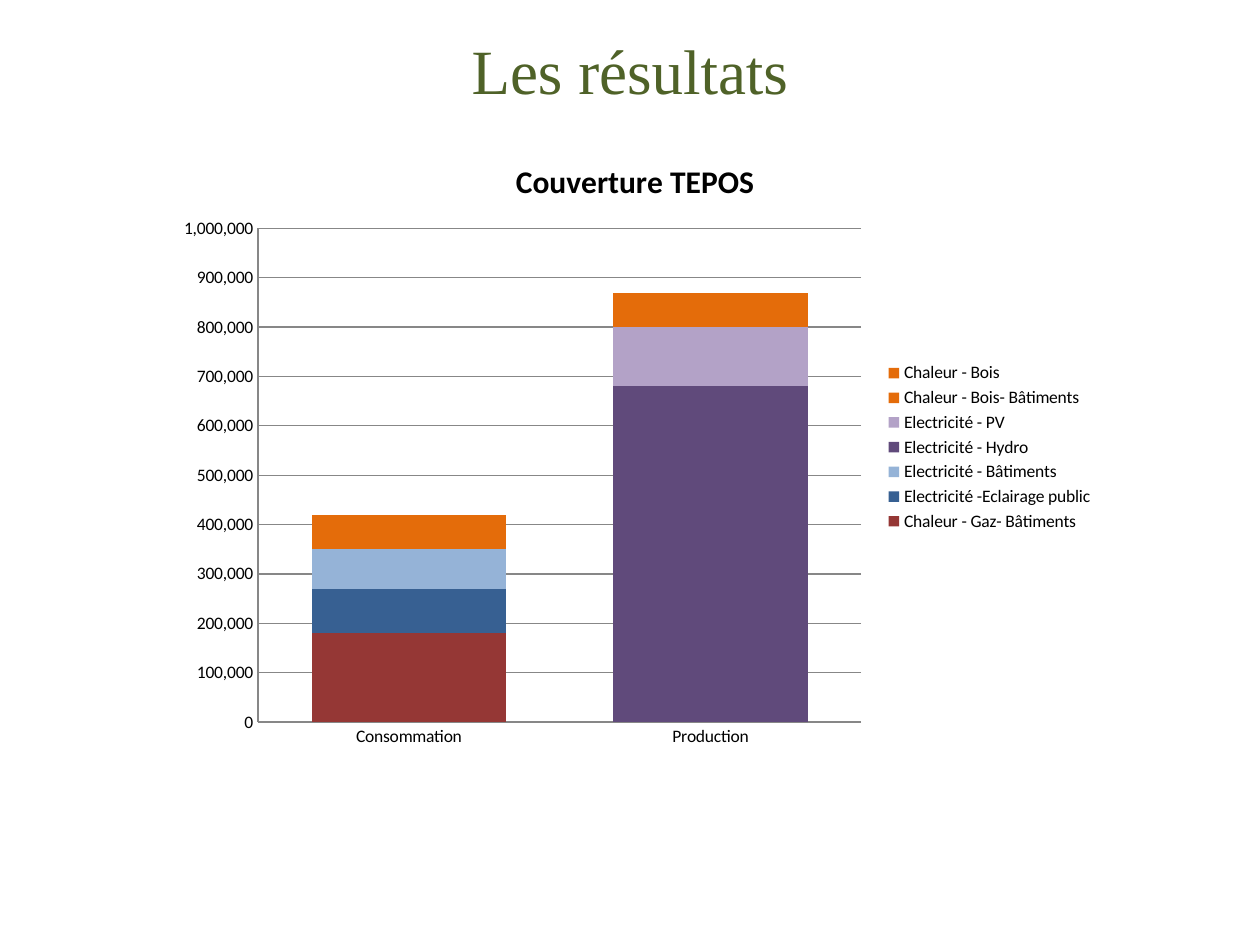
from lxml import etree
from pptx import Presentation
from pptx.chart.data import CategoryChartData
from pptx.dml.color import RGBColor
from pptx.enum.chart import XL_CHART_TYPE, XL_LEGEND_POSITION, XL_TICK_MARK
from pptx.enum.text import MSO_ANCHOR, PP_ALIGN
from pptx.oxml.ns import qn
from pptx.util import Pt

COLOURS = {
    "title": "4F6228",
    "text": "000000",
    "grid": "878787",
    "gas": "953735",
    "lighting": "376092",
    "buildings": "95B3D7",
    "hydro": "604A7B",
    "solar": "B3A2C7",
    "wood": "E46C0A",
}

CATEGORIES = ["Consommation", "Production"]
ENERGY_SOURCES = [
    ("Chaleur - Gaz- Bâtiments", (180000, None), "gas"),
    ("Electricité -Eclairage public", (90000, None), "lighting"),
    ("Electricité - Bâtiments", (80000, None), "buildings"),
    ("Electricité - Hydro", (None, 680000), "hydro"),
    ("Electricité - PV", (None, 120000), "solar"),
    ("Chaleur - Bois- Bâtiments", (70000, None), "wood"),
    ("Chaleur - Bois", (None, 70000), "wood"),
]


def colour(name):
    return RGBColor.from_string(COLOURS[name])


def style_font(font, size, name, colour_name, bold=False):
    font.size = Pt(size)
    font.name = name
    font.bold = bold
    font.color.rgb = colour(colour_name)


def style_line(line):
    line.color.rgb = colour("grid")
    line.width = Pt(0.75)


def place_plot_area(chart, x, y, w, h):
    """Fix the inner plot area, in fractions of the chart's size."""
    plot_area = chart.plots[0]._element.getparent()
    for automatic in plot_area.findall(qn("c:layout")):
        plot_area.remove(automatic)
    layout = etree.Element(qn("c:layout"))
    plot_area.insert(0, layout)
    manual = etree.SubElement(layout, qn("c:manualLayout"))
    settings = [("layoutTarget", "inner"), ("xMode", "edge"), ("yMode", "edge"),
                ("x", x), ("y", y), ("w", w), ("h", h)]
    for tag, value in settings:
        etree.SubElement(manual, qn(f"c:{tag}")).set("val", str(value))


def add_heading(slide, left, top, width, height):
    heading = slide.shapes.title
    heading.left, heading.top = Pt(left), Pt(top)
    heading.width, heading.height = Pt(width), Pt(height)
    frame = heading.text_frame
    frame.vertical_anchor = MSO_ANCHOR.MIDDLE
    paragraph = frame.paragraphs[0]
    paragraph.alignment = PP_ALIGN.CENTER
    run = paragraph.add_run()
    run.text = "Les résultats"
    style_font(run.font, 36, "Times New Roman", "title")


def add_coverage_chart(slide, left, top, width, height):
    coverage = CategoryChartData(number_format="#,##0")
    coverage.categories = CATEGORIES
    for name, values, _ in ENERGY_SOURCES:
        coverage.add_series(name, values)
    chart = slide.shapes.add_chart(
        XL_CHART_TYPE.COLUMN_STACKED,
        Pt(left), Pt(top), Pt(width), Pt(height), coverage).chart
    style_font(chart.font, 10, "Calibri", "text")

    # Chart title
    chart.has_title = True
    paragraph = chart.chart_title.text_frame.paragraphs[0]
    run = paragraph.add_run()
    run.text = "Couverture TEPOS"
    for font in (paragraph.font, run.font):
        style_font(font, 18, "Calibri", "text", bold=True)
    chart.chart_title.include_in_layout = False

    # Legend
    chart.has_legend = True
    chart.legend.position = XL_LEGEND_POSITION.RIGHT
    chart.legend.include_in_layout = False

    # Stacked columns
    place_plot_area(chart, 0.1, 0.15, 0.64, 0.79)
    plot = chart.plots[0]
    plot.gap_width = 55
    plot.overlap = 100
    plot.vary_by_categories = False
    for series, (_, _, colour_name) in zip(plot.series, ENERGY_SOURCES):
        series.format.fill.solid()
        series.format.fill.fore_color.rgb = colour(colour_name)

    # Axes and gridlines
    for axis in (chart.category_axis, chart.value_axis):
        axis.major_tick_mark = XL_TICK_MARK.NONE
        axis.minor_tick_mark = XL_TICK_MARK.NONE
        style_line(axis.format.line)
    value_axis = chart.value_axis
    value_axis.minimum_scale = 0
    value_axis.maximum_scale = 1000000
    value_axis.major_unit = 100000
    value_axis.tick_labels.number_format = "#,##0"
    value_axis.tick_labels.number_format_is_linked = False
    value_axis.has_major_gridlines = True
    style_line(value_axis.major_gridlines.format.line)


def main():
    presentation = Presentation()
    presentation.slide_width, presentation.slide_height = Pt(720), Pt(540)
    slide = presentation.slides.add_slide(presentation.slide_layouts[0])
    subtitle = slide.placeholders[1].element
    subtitle.getparent().remove(subtitle)

    add_heading(slide, 54, 10.8, 612, 57.6)
    add_coverage_chart(slide, 93.6, 77, 538.6, 357.1)
    presentation.save("out.pptx")


if __name__ == "__main__":
    main()
